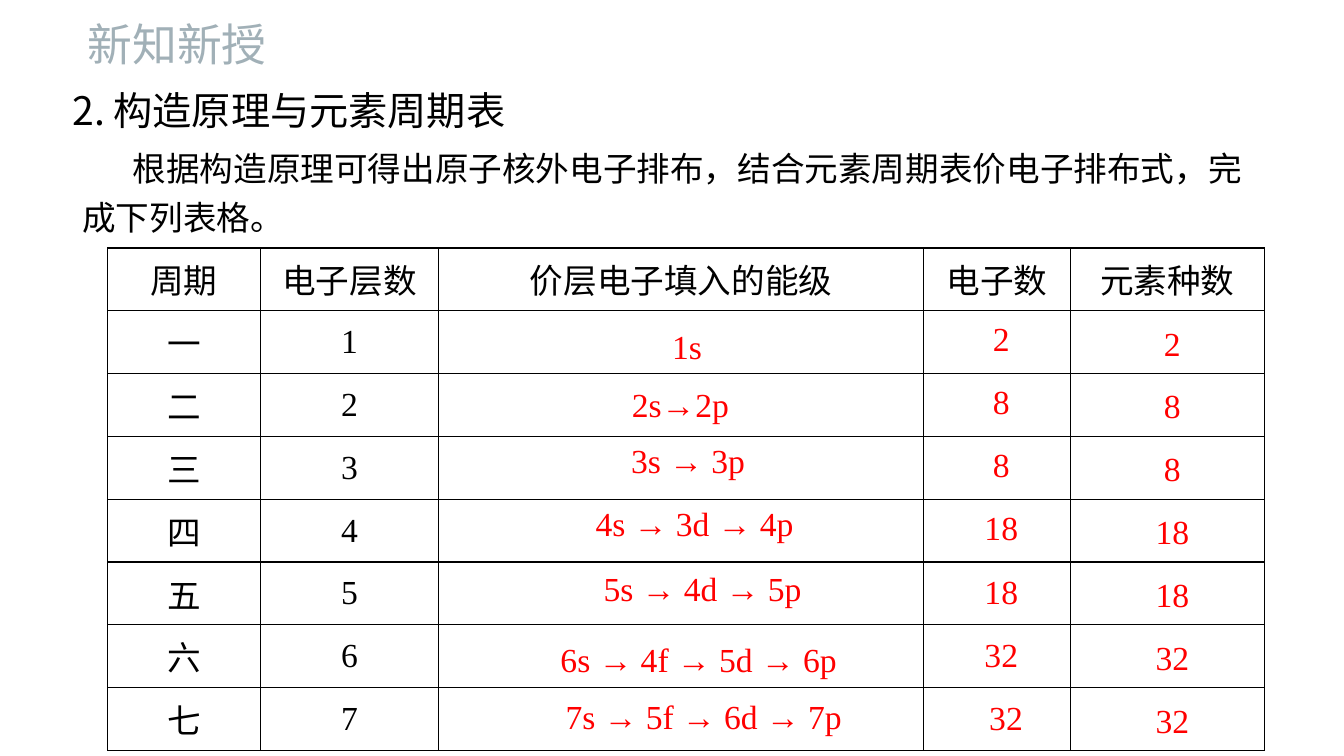
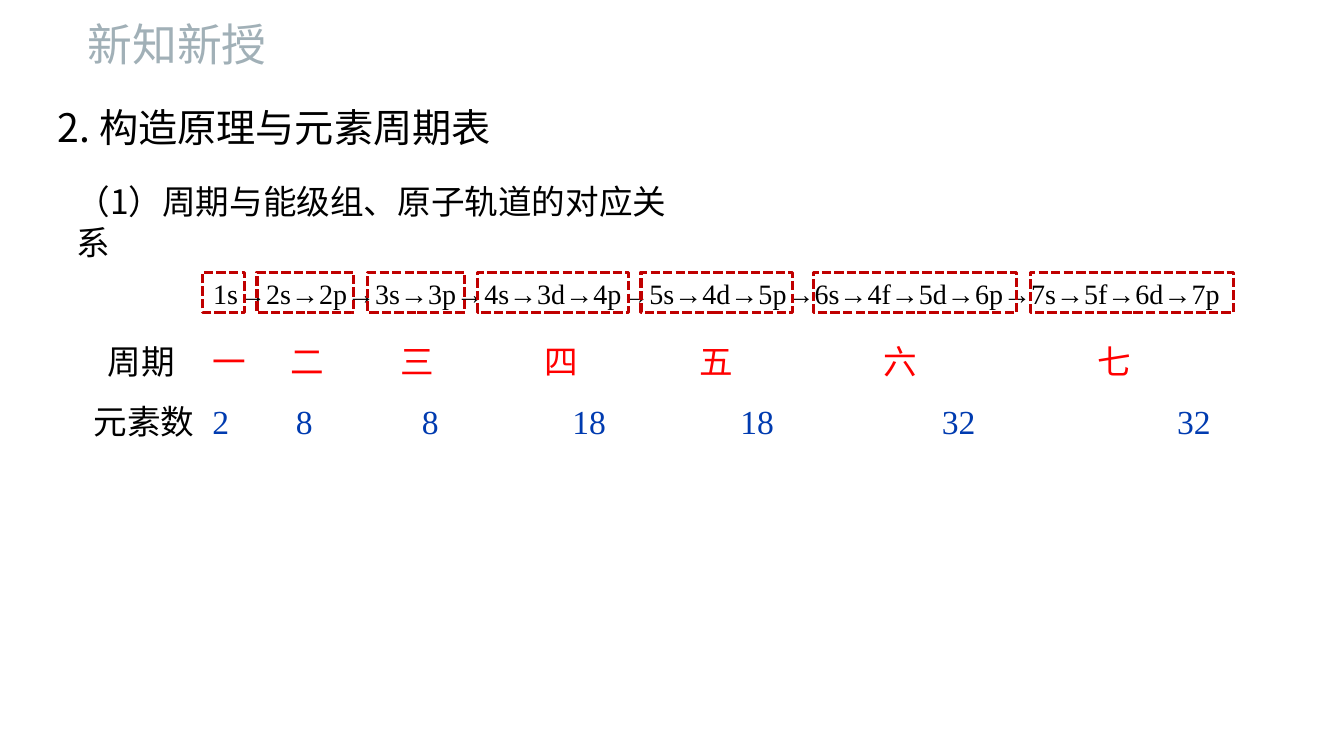
import dataclasses

import lxml.etree
import pptx
import pptx.dml.color
import pptx.enum.dml
import pptx.enum.shapes
import pptx.enum.text
import pptx.oxml.ns
import pptx.util

Pt = pptx.util.Pt
qn = pptx.oxml.ns.qn
CENTER = pptx.enum.text.PP_ALIGN.CENTER
LEFT = pptx.enum.text.PP_ALIGN.LEFT


@dataclasses.dataclass(frozen=True)
class Theme:
    sans: str = "Noto Sans CJK SC"
    serif: str = "Times New Roman"
    black: str = "000000"
    title: str = "A1B0B7"
    answer: str = "FF0000"
    count: str = "003BB0"
    frame: str = "C00000"
    title_size: int = 32
    heading_size: int = 28
    body_size: int = 24
    chain_size: int = 20


THEME = Theme()


def color(value):
    return pptx.dml.color.RGBColor.from_string(value)


def write(frame, text, size=THEME.body_size, font=THEME.serif, east=THEME.sans,
          ink=THEME.black, align=LEFT, indent=0, spacing=None, tabs=()):
    para = frame.paragraphs[0]
    para.alignment = align
    if spacing:
        para.line_spacing = spacing
    properties = para._p.get_or_add_pPr()
    if indent:
        properties.set("indent", str(Pt(indent)))
    if tabs:
        stops = lxml.etree.SubElement(properties, qn("a:tabLst"))
        for stop in tabs:
            lxml.etree.SubElement(stops, qn("a:tab"), pos=str(Pt(stop)), algn="l")
    span = para.add_run()
    span.text = text
    span.font.size = Pt(size)
    span.font.name = font
    span.font.color.rgb = color(ink)
    lxml.etree.SubElement(span._r.get_or_add_rPr(), qn("a:ea"), typeface=east)


class Lesson:
    def __init__(self, theme):
        self.theme = theme
        self.deck = pptx.Presentation()
        self.deck.slide_width = Pt(960)
        self.deck.slide_height = Pt(540)
        self.page = None

    def add_page(self, section, heading, left, top):
        self.page = self.deck.slides.add_slide(self.deck.slide_layouts[6])
        self.text(section, 55.4, 8.6, 210, 46, size=self.theme.title_size,
                  font=self.theme.sans, ink=self.theme.title)
        self.text(heading, left, top, 480, 41, size=self.theme.heading_size,
                  font=self.theme.sans)

    def text(self, text, left, top, width, height=36, **style):
        box = self.page.shapes.add_textbox(Pt(left), Pt(top), Pt(width), Pt(height))
        box.text_frame.word_wrap = True
        box.text_frame.auto_size = pptx.enum.text.MSO_AUTO_SIZE.SHAPE_TO_FIT_TEXT
        write(box.text_frame, text, **style)

    def answers(self, texts, centers, tops, width):
        for text, center, top in zip(texts, centers, tops):
            self.text(text, center - width / 2, top, width, align=CENTER,
                      east=self.theme.serif, ink=self.theme.answer)

    def dashed_frame(self, left, top, width, height):
        shape = self.page.shapes.add_shape(
            pptx.enum.shapes.MSO_SHAPE.RECTANGLE,
            Pt(left), Pt(top), Pt(width), Pt(height))
        shape.shadow.inherit = False
        shape.fill.background()
        shape.line.color.rgb = color(self.theme.frame)
        shape.line.width = Pt(2.25)
        shape.line.dash_style = pptx.enum.dml.MSO_LINE.SQUARE_DOT

    def table(self, rows, left, top, widths, row_height):
        table = self.page.shapes.add_table(
            len(rows), len(widths), Pt(left), Pt(top),
            Pt(sum(widths)), Pt(row_height * len(rows))).table
        table.first_row = False
        table.horz_banding = False
        for column, width in zip(table.columns, widths):
            column.width = Pt(width)
        for row, texts in zip(table.rows, rows):
            row.height = Pt(row_height)
            for cell, text in zip(row.cells, texts):
                self.style_cell(cell)
                if text:
                    write(cell.text_frame, text, align=CENTER)

    def style_cell(self, cell):
        cell.vertical_anchor = pptx.enum.text.MSO_ANCHOR.MIDDLE
        properties = cell._tc.get_or_add_tcPr()
        for side in ("a:lnL", "a:lnR", "a:lnT", "a:lnB"):
            line = lxml.etree.SubElement(properties, qn(side), w=str(Pt(1)))
            fill = lxml.etree.SubElement(line, qn("a:solidFill"))
            lxml.etree.SubElement(fill, qn("a:srgbClr"), val=self.theme.black)
        cell.fill.background()


SECTION = "新知新授"
HEADING = "2. 构造原理与元素周期表"
PERIODS = list("一二三四五六七")
COUNTS = ["2", "8", "8", "18", "18", "32", "32"]
LEVELS = [["1s"], ["2s", "2p"], ["3s", "3p"], ["4s", "3d", "4p"],
          ["5s", "4d", "5p"], ["6s", "4f", "5d", "6p"], ["7s", "5f", "6d", "7p"]]


def build_table_page(lesson):
    lesson.add_page(SECTION, HEADING, 44.6, 58.3)
    header = ["周期", "电子层数", "价层电子填入的能级", "电子数", "元素种数"]
    body = [[period, str(shell), "", "", ""]
            for shell, period in enumerate(PERIODS, 1)]
    lesson.table([header] + body, 77, 177.1, [108.9, 127.6, 346.2, 105, 138.4], 44.9)
    level_texts = [("→" if row == 1 else " → ").join(group)
                   for row, group in enumerate(LEVELS)]
    lesson.answers(level_texts,
                   [490.7, 486, 491.4, 496.1, 501.8, 499, 502.6],
                   [229, 270.7, 311, 355.7, 401.8, 452.9, 493.2], 300)
    lesson.answers(COUNTS, [837.4] * 7, [226.8 + 44.9 * row for row in range(7)], 96)
    lesson.answers(COUNTS, [715.2] * 6 + [718.6],
                   [223.2 + 45.2 * row for row in range(7)], 96)
    lesson.text("根据构造原理可得出原子核外电子排布，结合元素周期表价电子排布式，完成下列表格。",
                51.8, 96.5, 847.4, 77, indent=36, spacing=1.2)


def build_chain_page(lesson):
    theme = lesson.theme
    lesson.add_page(SECTION, HEADING, 34.2, 70.6)
    lesson.text("（1）周期与能级组、原子轨道的对应关系", 47.5, 126, 458.6,
                font=theme.sans)
    chain = "→".join(level for group in LEVELS for level in group)
    lesson.text(chain, 134.6, 193.7, 754.6, 55, size=theme.chain_size,
                align=CENTER, east=theme.serif)
    frames = [(144.7, 30.2), (183.6, 69.1), (262.8, 69.1), (341.3, 108),
              (457.9, 108), (581, 145.4), (735.8, 145.4)]
    for left, width in frames:
        lesson.dashed_frame(left, 194.4, width, 28.8)
    lesson.text("周期", 69.8, 239.8, 72, font=theme.sans)
    lesson.text("元素数", 59.8, 283, 96, font=theme.sans)
    lesson.text("\t".join(PERIODS), 144.7, 239.8, 734.4, ink=theme.answer,
                tabs=[56, 134, 237, 348, 479, 632])
    lesson.text("\t".join(COUNTS), 144.7, 283, 744.5, 40, ink=theme.count,
                tabs=[59.5, 149.5, 257, 377, 521, 689])


def main():
    lesson = Lesson(THEME)
    build_table_page(lesson)
    build_chain_page(lesson)
    lesson.deck.save("out.pptx")


if __name__ == "__main__":
    main()
